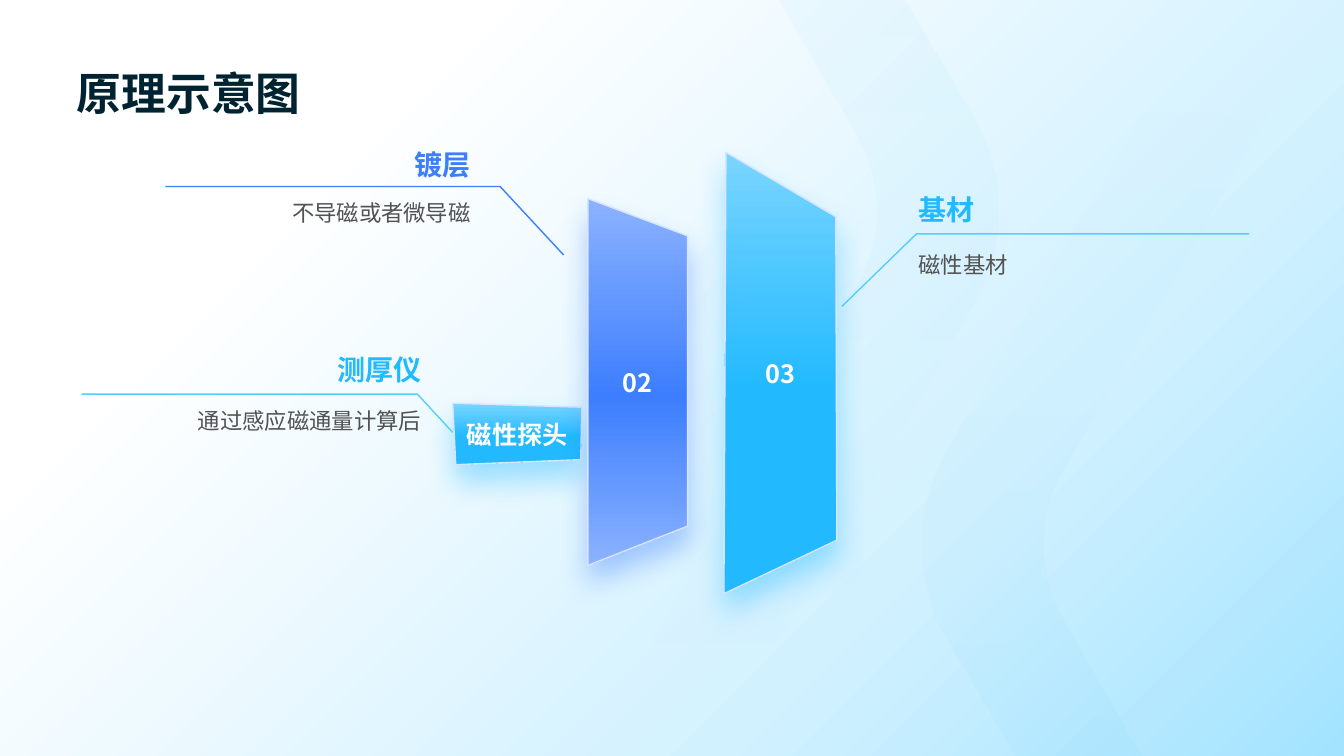
from lxml import etree
from pptx import Presentation
from pptx.dml.color import RGBColor
from pptx.enum.shapes import MSO_SHAPE
from pptx.enum.text import MSO_ANCHOR, PP_ALIGN
from pptx.oxml.ns import qn
from pptx.util import Inches, Pt

RECTANGLE = MSO_SHAPE.RECTANGLE
TOP, MIDDLE, BOTTOM = MSO_ANCHOR.TOP, MSO_ANCHOR.MIDDLE, MSO_ANCHOR.BOTTOM
LEFT, CENTER, RIGHT = PP_ALIGN.LEFT, PP_ALIGN.CENTER, PP_ALIGN.RIGHT

WHITE = RGBColor(0xFF, 0xFF, 0xFF)
PALE_CYAN = RGBColor(0xD2, 0xF1, 0xFF)
SOFT_CYAN = RGBColor(0xA3, 0xE3, 0xFF)
LIGHT_CYAN = RGBColor(0x7A, 0xD5, 0xFF)
LEADER_CYAN = RGBColor(0x56, 0xCC, 0xFF)
CYAN = RGBColor(0x22, 0xB9, 0xFF)
BLUE = RGBColor(0x3D, 0x7E, 0xFE)
LIGHT_BLUE = RGBColor(0x8B, 0xB2, 0xFE)
EDGE = RGBColor(0xD8, 0xE5, 0xFF)
NAVY = RGBColor(0x00, 0x23, 0x32)
GREY = RGBColor(0x52, 0x52, 0x52)
FONT = "Noto Sans CJK SC"

prs = Presentation()
prs.slide_width, prs.slide_height = Inches(13.33), Inches(7.5)
slide = prs.slides.add_slide(prs.slide_layouts[6])
shapes = slide.shapes


def outline(points, close=True):
    (x, y), *rest = [(Inches(px), Inches(py)) for px, py in points]
    builder = shapes.build_freeform(x, y)
    builder.add_line_segments(rest, close=close)
    shape = builder.convert_to_shape()
    shape.shadow.inherit = False
    return shape


def fill_gradient(shape, stops, angle):
    """Each stop is (position %, colour, opacity %)."""
    shape.fill.gradient()
    gradient = shape._element.spPr.find(qn("a:gradFill"))
    gradient.find(qn("a:lin")).set("ang", str(angle * 60000))
    stop_list = gradient.find(qn("a:gsLst"))
    for old_stop in list(stop_list):
        stop_list.remove(old_stop)
    for position, color, opacity in stops:
        stop = etree.SubElement(stop_list, qn("a:gs"), pos=str(position * 1000))
        rgb = etree.SubElement(stop, qn("a:srgbClr"), val=str(color))
        etree.SubElement(rgb, qn("a:alpha"), val=str(opacity * 1000))


# Backdrop
backdrop = shapes.add_shape(RECTANGLE, 0, 0, prs.slide_width, prs.slide_height)
backdrop.shadow.inherit = False
backdrop.line.fill.background()
fill_gradient(backdrop, [(23, WHITE, 100), (70, PALE_CYAN, 100), (100, SOFT_CYAN, 100)], 45)

# Bent bands: the second is the first turned half round
bends = [
    [(9.66, 1.18), (9.98, 1.75), (9.98, 2.44), (9.66, 3.01)],
    [(8.48, 2.86), (8.76, 2.39), (8.76, 1.8), (8.48, 1.33)],
]
outer_bend, inner_bend = [
    [
        tuple(
            (1 - t) ** 3 * a + 3 * (1 - t) ** 2 * t * b + 3 * (1 - t) * t**2 * c + t**3 * d
            for a, b, c, d in zip(*bend)
        )
        for t in [step / 16 for step in range(17)]
    ]
    for bend in bends
]
band = [(7.72, 0), (8.97, 0), *outer_bend, (7.06, 7.5), (5.71, 7.5),
        (5.78, 7.43), (5.92, 7.28), (6.03, 7.11), *inner_bend]
turned_band = [(19.04 - x, 7.5 - y) for x, y in band]
for points, angle in [(band, 270), (turned_band, 90)]:
    bent_band = outline(points)
    bent_band.line.fill.background()
    fill_gradient(bent_band, [(0, CYAN, 0), (100, CYAN, 4)], angle)

# Probe, coating and base panels
cyan_stops = [(0, LIGHT_CYAN, 100), (54, CYAN, 100), (100, CYAN, 100)]
blue_stops = [(0, LIGHT_BLUE, 100), (54, BLUE, 100), (100, LIGHT_BLUE, 100)]
panels = [
    ("磁性探头", [(4.49, 4), (5.77, 4.04), (5.76, 4.56), (4.52, 4.61)], cyan_stops, CYAN),
    ("02", [(5.83, 1.97), (6.82, 2.34), (6.82, 5.22), (5.83, 5.61)], blue_stops, BLUE),
    ("03", [(7.2, 1.51), (8.29, 2.15), (8.3, 5.36), (7.18, 5.89)], cyan_stops, CYAN),
]
panel_style = {"size": Pt(18), "bold": True}
texts = []
for caption, corners, stops, glow in panels:
    panel = outline(corners)
    fill_gradient(panel, stops, 90)
    panel.line.color.rgb = EDGE
    panel.line.width = Pt(1)
    effects = panel._element.spPr.find(qn("a:effectLst"))
    shadow = etree.SubElement(
        effects, qn("a:outerShdw"), blurRad=str(Pt(20)), dist=str(Pt(12)),
        dir="5400000", algn="t", rotWithShape="0")
    shadow_color = etree.SubElement(shadow, qn("a:srgbClr"), val=str(glow))
    etree.SubElement(shadow_color, qn("a:alpha"), val="40000")
    texts.append((panel, caption, panel_style, WHITE, MIDDLE, CENTER))

# Leader lines
leaders = [
    ([(0.81, 3.91), (4.14, 3.91), (4.49, 4.29)], LEADER_CYAN),
    ([(8.35, 3.04), (9.09, 2.32), (12.39, 2.32)], LEADER_CYAN),
    ([(1.64, 1.85), (4.96, 1.85), (5.59, 2.53)], BLUE),
]
for points, color in leaders:
    leader = outline(points, close=False)
    leader.fill.background()
    leader.line.color.rgb = color
    leader.line.width = Pt(1)

# Title, headings and descriptions
title_style = {"size": Pt(32), "bold": True}
heading_style = {"size": Pt(20), "bold": True}
body_style = {"size": Pt(16), "bold": False}
labels = [
    ("原理示意图", (0.76, 0.39, 11.81, 0.79), title_style, NAVY, BOTTOM, LEFT),
    ("镀层", (1.51, 1.38, 3.16, 0.42), heading_style, BLUE, BOTTOM, RIGHT),
    ("不导磁或者微导磁", (0.87, 1.9, 3.8, 1.45), body_style, GREY, TOP, RIGHT),
    ("测厚仪", (1.02, 3.41, 3.16, 0.42), heading_style, CYAN, BOTTOM, RIGHT),
    ("通过感应磁通量计算后", (0.76, 3.96, 3.42, 1.85), body_style, GREY, TOP, RIGHT),
    ("基材", (9.11, 1.77, 3.16, 0.47), heading_style, CYAN, BOTTOM, LEFT),
    ("磁性基材", (9.11, 2.41, 3.46, 2.98), body_style, GREY, TOP, LEFT),
]
for wording, place, style, color, anchor, align in labels:
    label = shapes.add_textbox(*[Inches(length) for length in place])
    texts.append((label, wording, style, color, anchor, align))

# Wording of panels and labels
for holder, wording, style, color, anchor, align in texts:
    frame = holder.text_frame
    frame.margin_left = frame.margin_right = frame.margin_top = frame.margin_bottom = 0
    frame.word_wrap = style is not panel_style
    frame.vertical_anchor = anchor
    paragraph = frame.paragraphs[0]
    paragraph.alignment = align
    if style is body_style:
        paragraph.line_spacing = 1.3
    run = paragraph.add_run()
    run.text = wording
    for attribute, value in style.items():
        setattr(run.font, attribute, value)
    run.font.color.rgb = color
    run.font.name = FONT
    etree.SubElement(run._r.get_or_add_rPr(), qn("a:ea"), typeface=FONT)

prs.save("out.pptx")
